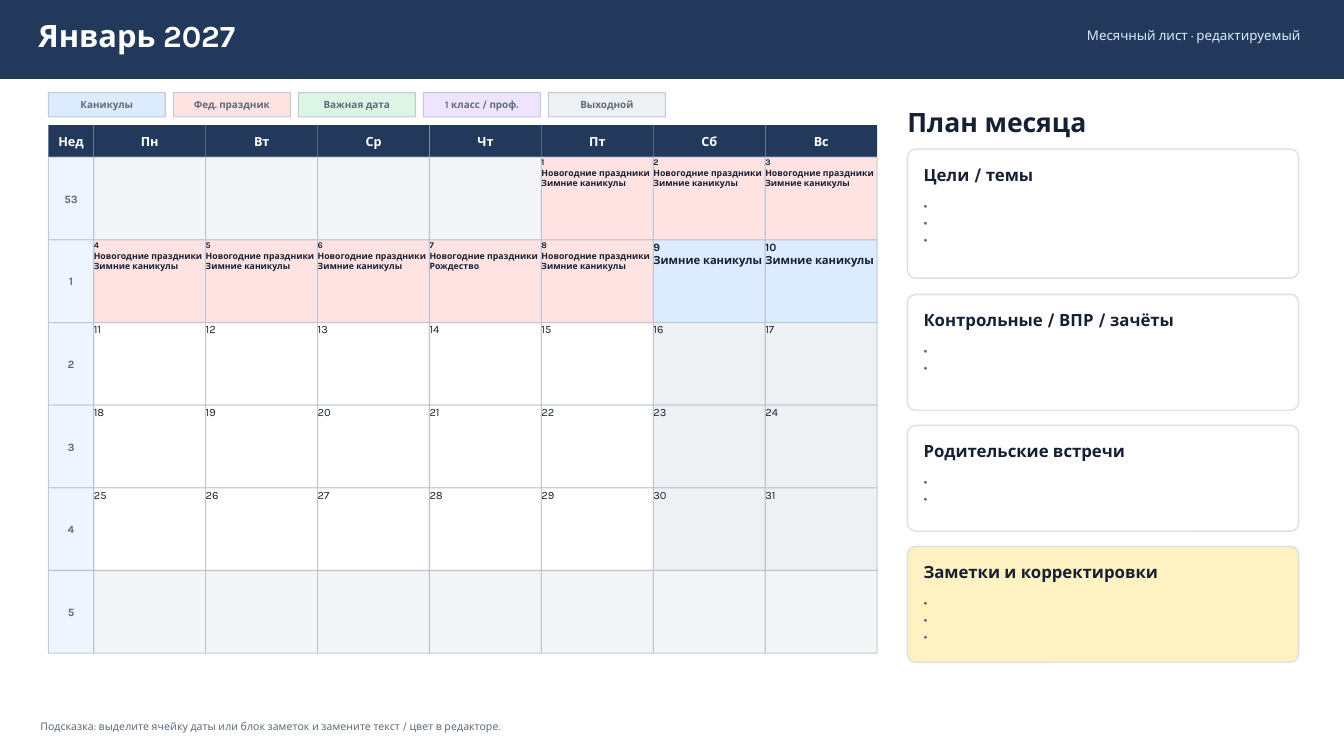
from dataclasses import dataclass

from lxml import etree
from pptx import Presentation
from pptx.dml.color import RGBColor
from pptx.enum.shapes import MSO_SHAPE
from pptx.enum.text import MSO_ANCHOR, MSO_AUTO_SIZE, PP_ALIGN
from pptx.oxml.ns import qn
from pptx.util import Inches, Pt

RECTANGLE = MSO_SHAPE.RECTANGLE
ROUNDED = MSO_SHAPE.ROUNDED_RECTANGLE
LEFT, CENTER, RIGHT = PP_ALIGN.LEFT, PP_ALIGN.CENTER, PP_ALIGN.RIGHT
TOP, MIDDLE = MSO_ANCHOR.TOP, MSO_ANCHOR.MIDDLE
NO_AUTOFIT = MSO_AUTO_SIZE.NONE

FONT = "Karla"
COLORS = {
    "navy": "23395B", "white": "FFFFFF", "ink": "172033", "muted": "5E6B7A",
    "vacation": "DDEBFF", "holiday": "FFE2E2", "important": "DCF5E5",
    "first_grade": "EFE4FF", "weekend": "EEF1F4", "week": "EEF5FF",
    "outside": "F4F5F6", "notes": "FFF2C2", "grid": "BAC3CF",
    "panel_line": "D8DEE6",
}

HOLIDAYS = "Новогодние праздники"
VACATION = "Зимние каникулы"
WEEKDAYS = ["Пн", "Вт", "Ср", "Чт", "Пт", "Сб", "Вс"]
WEEKS = [53, 1, 2, 3, 4, 5]
FIRST_WEEKDAY = 4
DAYS_IN_MONTH = 31
EVENTS = {day: [HOLIDAYS, VACATION] for day in range(1, 9)}
EVENTS[7] = [HOLIDAYS, "Рождество"]
EVENTS |= {day: [VACATION] for day in (9, 10)}

GRID_LEFT, GRID_TOP = 0.48, 1.24
WEEK_WIDTH, DAY_WIDTH = 0.45, 1.11
HEADER_HEIGHT, ROW_HEIGHT = 0.32, 0.82


@dataclass(frozen=True)
class Style:
    size: float
    color: str
    bold: bool = False
    align: PP_ALIGN = LEFT
    anchor: MSO_ANCHOR = MIDDLE


@dataclass(frozen=True)
class Area:
    left: float
    top: float
    width: float
    height: float

    def lengths(self) -> list:
        return [Inches(v) for v in (self.left, self.top, self.width, self.height)]


@dataclass(frozen=True)
class Outline:
    color: str
    width: float
    opacity: int


@dataclass(frozen=True)
class Legend:
    label: str
    fill: str


@dataclass(frozen=True)
class Panel:
    heading: str
    top: float
    height: float
    bullets: int
    fill: str = "white"


@dataclass(frozen=True)
class Cell:
    lines: list
    fill: str
    style: Style


GRID_LINE = Outline("grid", 0.75, 85)
PANEL_LINE = Outline("panel_line", 1, 90)
BAND_LINE = Outline("navy", 1, 100)
LEGENDS = [
    Legend("Каникулы", "vacation"),
    Legend("Фед. праздник", "holiday"),
    Legend("Важная дата", "important"),
    Legend("1 класс / проф.", "first_grade"),
    Legend("Выходной", "weekend"),
]
PANELS = [
    Panel("Цели / темы", 1.48, 1.28, 3),
    Panel("Контрольные / ВПР / зачёты", 2.92, 1.15, 2),
    Panel("Родительские встречи", 4.22, 1.05, 2),
    Panel("Заметки и корректировки", 5.42, 1.15, 3, "notes"),
]


def rgb(name: str) -> RGBColor:
    return RGBColor.from_string(COLORS[name])


def write(box, lines: list, style: Style) -> None:
    frame = box.text_frame
    frame.margin_left = frame.margin_right = frame.margin_top = frame.margin_bottom = 0
    frame.auto_size = NO_AUTOFIT
    frame.word_wrap = True
    frame.vertical_anchor = style.anchor
    frame.text = "\n".join(lines)
    for para in frame.paragraphs:
        para.alignment = style.align
        for span in para.runs:
            span.font.name = FONT
            span.font.size = Pt(style.size)
            span.font.bold = style.bold
            span.font.color.rgb = rgb(style.color)


def add_text(page, area: Area, lines: list, style: Style) -> None:
    write(page.shapes.add_textbox(*area.lengths()), lines, style)


def add_box(page, kind, area: Area, fill: str, outline: Outline | None):
    box = page.shapes.add_shape(kind, *area.lengths())
    box.shadow.inherit = False
    box.fill.solid()
    box.fill.fore_color.rgb = rgb(fill)
    if outline is None:
        box.line.fill.background()
        return box
    box.line.color.rgb = rgb(outline.color)
    box.line.width = Pt(outline.width)
    color = box.line._ln.find(f".//{qn('a:srgbClr')}")
    etree.SubElement(color, qn("a:alpha"), val=str(outline.opacity * 1000))
    return box


def add_cell(page, area: Area, cell: Cell, outline: Outline | None = GRID_LINE) -> None:
    box = add_box(page, RECTANGLE, area, cell.fill, outline)
    if cell.lines:
        write(box, cell.lines, cell.style)


def describe_day(day: int, weekday: int) -> Cell:
    plain = Style(8, "ink", anchor=TOP)
    if not 1 <= day <= DAYS_IN_MONTH:
        return Cell([], "outside", plain)
    events = EVENTS.get(day, [])
    lines = [str(day), *events]
    if HOLIDAYS in events:
        return Cell(lines, "holiday", Style(6.2, "ink", True, anchor=TOP))
    if events:
        return Cell(lines, "vacation", Style(8, "ink", True, anchor=TOP))
    return Cell(lines, "weekend" if weekday >= 5 else "white", plain)


def grid_area(row: int, column: int) -> Area:
    left = GRID_LEFT + (WEEK_WIDTH + (column - 1) * DAY_WIDTH if column else 0)
    top = GRID_TOP + (HEADER_HEIGHT + (row - 1) * ROW_HEIGHT if row else 0)
    return Area(left, top, DAY_WIDTH if column else WEEK_WIDTH,
                ROW_HEIGHT if row else HEADER_HEIGHT)


def add_calendar(page) -> None:
    header = Style(9, "white", True, CENTER)
    for column, label in enumerate(["Нед", *WEEKDAYS]):
        add_cell(page, grid_area(0, column), Cell([label], "navy", header), None)
    week_style = Style(8, "muted", True, CENTER)
    for row, week in enumerate(WEEKS, 1):
        add_cell(page, grid_area(row, 0), Cell([str(week)], "week", week_style))
        for weekday in range(len(WEEKDAYS)):
            day = (row - 1) * 7 + weekday - FIRST_WEEKDAY + 1
            add_cell(page, grid_area(row, weekday + 1), describe_day(day, weekday))


def add_panel(page, panel: Panel) -> None:
    area = Area(9, panel.top, 3.88, panel.height)
    box = add_box(page, ROUNDED, area, panel.fill, PANEL_LINE)
    box.adjustments[0] = 0.08 / panel.height
    add_text(page, Area(9.16, panel.top + 0.12, 3.56, 0.26), [panel.heading],
             Style(12, "ink", True))
    add_text(page, Area(9.16, panel.top + 0.47, 3.56, panel.height - 0.56),
             ["•"] * panel.bullets, Style(10, "muted", anchor=TOP))


def add_heading(page) -> None:
    band = add_box(page, RECTANGLE, Area(0, 0, 13.33, 0.78), "navy", BAND_LINE)
    page.shapes._spTree.insert(2, band._element)
    title = page.shapes.title
    title.left, title.top, title.width, title.height = Area(0.38, 0.16, 8.8, 0.38).lengths()
    write(title, ["Январь 2027"], Style(22, "white", True))
    add_text(page, Area(9.6, 0.2, 3.3, 0.3), ["Месячный лист · редактируемый"],
             Style(9.5, "vacation", align=RIGHT))


def main() -> None:
    deck = Presentation()
    deck.slide_width, deck.slide_height = Inches(13.33), Inches(7.5)
    page = deck.slides.add_slide(deck.slide_layouts[5])
    add_heading(page)
    legend_style = Style(7.1, "muted", True, CENTER)
    for index, legend in enumerate(LEGENDS):
        add_cell(page, Area(0.48 + index * 1.24, 0.92, 1.16, 0.24),
                 Cell([legend.label], legend.fill, legend_style))
    add_calendar(page)
    add_text(page, Area(9, 1.06, 3.75, 0.3), ["План месяца"], Style(19, "ink", True))
    for panel in PANELS:
        add_panel(page, panel)
    hint = "Подсказка: выделите ячейку даты или блок заметок и замените текст / цвет в редакторе."
    add_text(page, Area(0.4, 7.12, 12.55, 0.18), [hint], Style(7.5, "muted"))
    deck.save("out.pptx")


if __name__ == "__main__":
    main()
